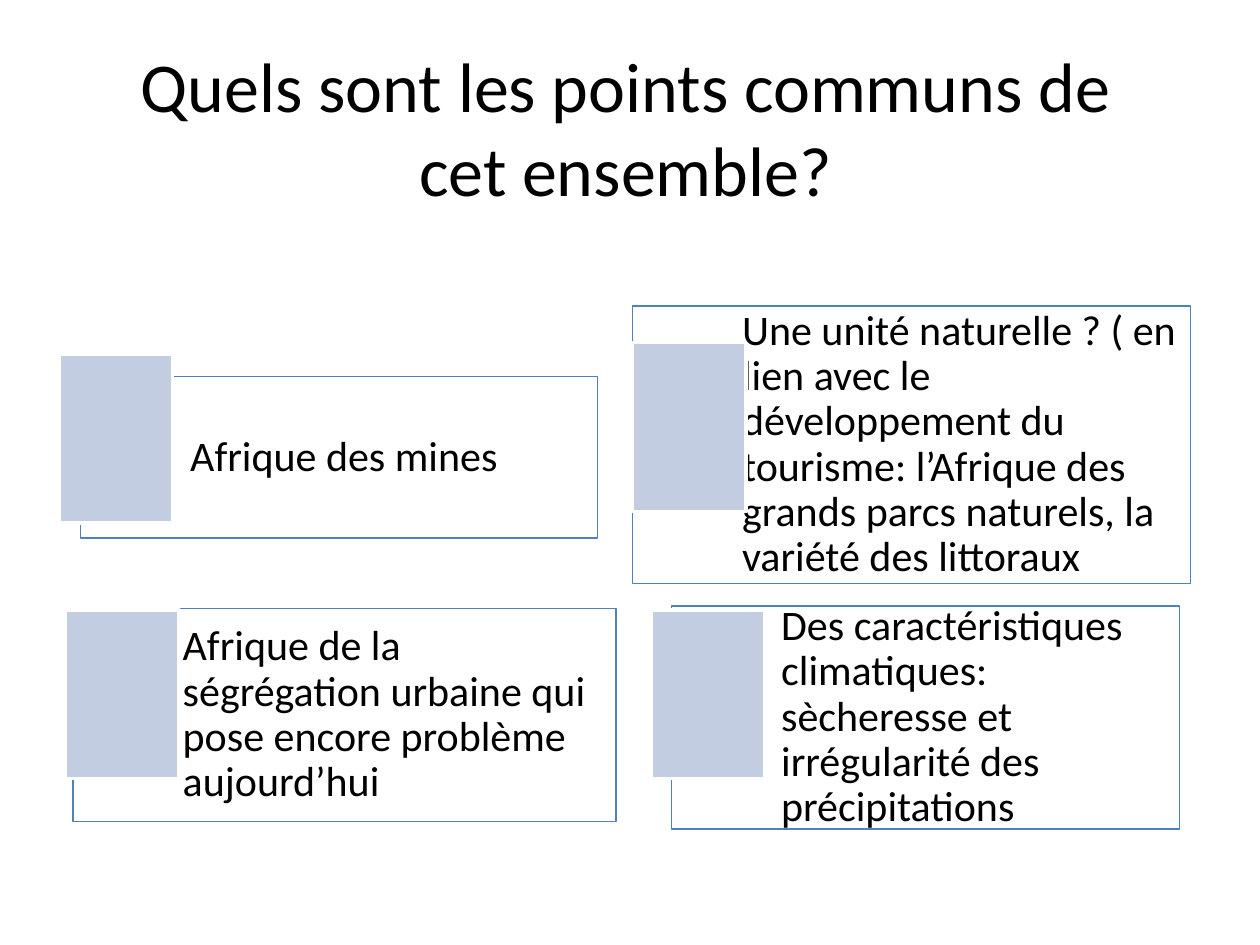
from dataclasses import dataclass

from lxml.etree import SubElement
from pptx import Presentation
from pptx.dml.color import RGBColor
from pptx.enum.shapes import MSO_SHAPE as Preset
from pptx.enum.text import MSO_ANCHOR as Anchor, PP_ALIGN as Align
from pptx.oxml.ns import qn
from pptx.util import Inches, Pt


@dataclass(frozen=True)
class Theme:
    font: str = "Calibri"
    ink: str = "000000"
    paper: str = "FFFFFF"
    border: str = "4F81BD"
    accent: str = "C2CDE1"
    title_size: int = 40
    card_size: int = 24
    border_width: float = 0.75
    accent_width: float = 2
    card_opacity: int = 40


@dataclass(frozen=True)
class Area:
    """Position and size in grid columns and rows."""
    col: float
    row: float
    cols: float
    rows: float


@dataclass(frozen=True)
class Card:
    text: str
    frame: Area
    accent_col: float
    accent_row: float


THEME = Theme()
COLUMNS, ROWS = 100, 75
CELL = Inches(10) / COLUMNS
ACCENT_COLS, ACCENT_ROWS = 9, 13.4
TITLE_AREA = Area(9.1, 2.9, 81.1, 14.5)

CARDS = (
    Card("Afrique des mines", Area(6.4, 29.9, 41, 12.8), 4.7, 28.1),
    Card("Une unité naturelle ? ( en lien avec le développement du tourisme: "
         "l’Afrique des grands parcs naturels, la variété des littoraux",
         Area(50.2, 24.3, 44.3, 22), 50.2, 27.2),
    Card("Afrique de la ségrégation urbaine qui pose encore problème aujourd’hui",
         Area(5.8, 48.3, 43.1, 16.9), 5.2, 48.4),
    Card("Des caractéristiques climatiques: sècheresse et irrégularité des précipitations",
         Area(53.3, 48.1, 40.3, 17.7), 51.7, 48.4),
)


def grid(count: float) -> int:
    return round(count * CELL)


def place(area: Area) -> tuple[int, ...]:
    return tuple(grid(n) for n in (area.col, area.row, area.cols, area.rows))


def write(shape, text: str, *, size: float, align=Align.LEFT, anchor=Anchor.TOP,
          spacing: float = 1, margins=(0.1, 0.05, 0.1, 0.05)) -> None:
    frame = shape.text_frame
    frame.word_wrap = True
    frame.vertical_anchor = anchor
    (frame.margin_left, frame.margin_top,
     frame.margin_right, frame.margin_bottom) = map(Inches, margins)
    paragraph = frame.paragraphs[0]
    paragraph.alignment = align
    paragraph.line_spacing = spacing
    run = paragraph.add_run()
    run.text = text
    run.font.name = THEME.font
    run.font.size = Pt(size)
    run.font.color.rgb = RGBColor.from_string(THEME.ink)


def add_box(slide, area: Area, fill: str, line: str, width: float, opacity: int = 100):
    box = slide.shapes.add_shape(Preset.RECTANGLE, *place(area))
    box.shadow.inherit = False
    box.fill.solid()
    box.fill.fore_color.rgb = RGBColor.from_string(fill)
    box.line.color.rgb = RGBColor.from_string(line)
    box.line.width = Pt(width)
    if opacity < 100:
        color = box.fill._xPr.find(qn("a:solidFill"))[0]
        SubElement(color, qn("a:alpha")).set("val", str(opacity * 1000))
    return box


def add_card(slide, card: Card) -> None:
    box = add_box(slide, card.frame, THEME.paper, THEME.border,
                  THEME.border_width, THEME.card_opacity)
    write(box, card.text, size=THEME.card_size, anchor=Anchor.MIDDLE,
          spacing=0.9, margins=(0.87, 0.1, 0.1, 0.1))
    accent = Area(card.accent_col, card.accent_row, ACCENT_COLS, ACCENT_ROWS)
    add_box(slide, accent, THEME.accent, THEME.paper, THEME.accent_width)


def main() -> None:
    deck = Presentation()
    deck.slide_width, deck.slide_height = grid(COLUMNS), grid(ROWS)
    slide = deck.slides.add_slide(deck.slide_layouts[6])

    # Four shared features, each with its accent block
    for card in CARDS:
        add_card(slide, card)

    # Title
    title = slide.shapes.add_textbox(*place(TITLE_AREA))
    write(title, "Quels sont les points communs de cet ensemble?",
          size=THEME.title_size, align=Align.CENTER)

    deck.save("out.pptx")


if __name__ == "__main__":
    main()
